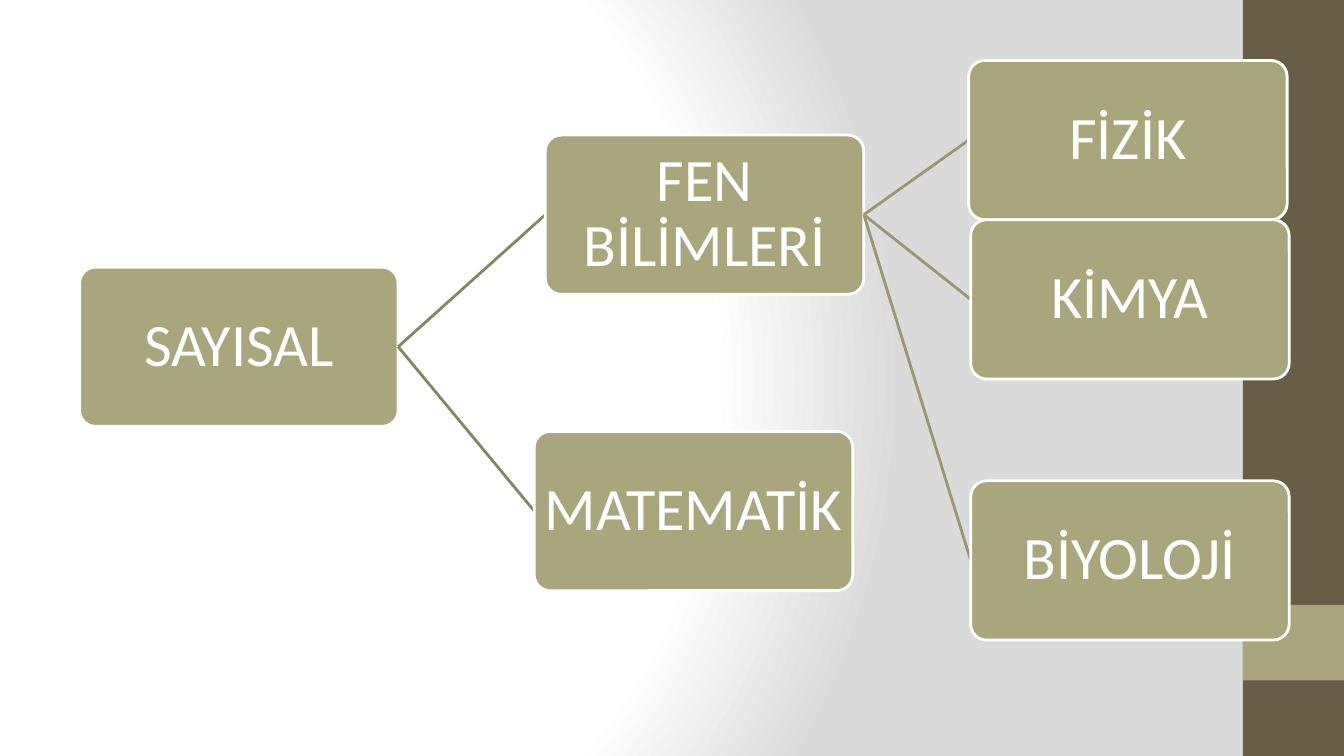
from dataclasses import dataclass

from lxml import etree
from pptx import Presentation
from pptx.dml.color import RGBColor
from pptx.enum.shapes import MSO_CONNECTOR, MSO_SHAPE
from pptx.enum.text import MSO_ANCHOR, PP_ALIGN
from pptx.oxml import parse_xml
from pptx.oxml.ns import nsdecls, qn
from pptx.util import Inches, Pt

STRAIGHT = MSO_CONNECTOR.STRAIGHT
RECTANGLE = MSO_SHAPE.RECTANGLE
ROUNDED = MSO_SHAPE.ROUNDED_RECTANGLE
MIDDLE = MSO_ANCHOR.MIDDLE
CENTER = PP_ALIGN.CENTER
LEFT_SIDE, RIGHT_SIDE = 1, 3

CELL = Inches(0.1)
SLIDE_COLUMNS, SLIDE_ROWS = 133.33, 75
NODE_COLUMNS, NODE_ROWS = 31.6, 15.8
SIDEBAR_BOX = (123.3, 0, 10.03, SLIDE_ROWS)
TREE_BOX = (7.9, 6, 120, 57.5)


@dataclass(frozen=True)
class Theme:
    paper: str = "FFFFFF"
    shade: str = "DADADA"
    sidebar: str = "675E47"
    accent: str = "A9A57C"
    branches: tuple = ("878463", "999671")
    font: str = "Calibri"
    size: int = 43
    stroke: int = 2


THEME = Theme()

SUBJECTS = ("SAYISAL", 0, 20.5, (
    ("FEN BİLİMLERİ", 46.2, 7.4, (
        ("FİZİK", 88.2, 0, ()),
        ("KİMYA", 88.4, 15.8, ()),
        ("BİYOLOJİ", 88.4, 41.7, ()),
    )),
    ("MATEMATİK", 45.1, 36.8, ()),
))


def grid(*cells):
    return [round(count * CELL) for count in cells]


def apply(target, formats):
    for name, value in formats.items():
        setattr(target, name, value)


def color(value):
    return RGBColor.from_string(value)


def add_panel(slide, preset, box, fill):
    panel = slide.shapes.add_shape(preset, *grid(*box))
    panel.shadow.inherit = False
    panel.fill.solid()
    panel.fill.fore_color.rgb = color(fill)
    panel.line.fill.background()
    return panel


def paint_background(slide):
    stops = "".join(
        f'<a:gs pos="{share * 1000}"><a:srgbClr val="{tint}"/></a:gs>'
        for share, tint in ((0, THEME.paper), (75, THEME.paper), (100, THEME.shade))
    )
    background = parse_xml(
        f'<p:bg {nsdecls("p", "a")}><p:bgPr><a:gradFill rotWithShape="1">'
        f'<a:gsLst>{stops}</a:gsLst><a:path path="circle">'
        '<a:fillToRect l="20000" t="50000" r="100000" b="50000"/></a:path>'
        '</a:gradFill><a:effectLst/></p:bgPr></p:bg>'
    )
    slide.element.cSld.insert(0, background)


def add_sidebar(slide, box):
    left, top, width, height = box
    add_panel(slide, RECTANGLE, box, THEME.sidebar)
    band = (left, top + height * 0.8, width, height * 0.1)
    add_panel(slide, RECTANGLE, band, THEME.accent)


def add_node(slide, label, left, top):
    node = add_panel(slide, ROUNDED, (left, top, NODE_COLUMNS, NODE_ROWS), THEME.accent)
    node.adjustments[0] = 0.1
    node.line.color.rgb = color(THEME.paper)
    node.line.width = Pt(THEME.stroke)
    frame = node.text_frame
    inset = Inches(0.03)
    apply(frame, {
        "word_wrap": True, "vertical_anchor": MIDDLE,
        "margin_left": inset, "margin_right": inset,
        "margin_top": inset, "margin_bottom": inset,
    })
    paragraph = frame.paragraphs[0]
    apply(paragraph, {"text": label, "alignment": CENTER, "line_spacing": 0.9})
    font = paragraph.runs[0].font
    apply(font, {"name": THEME.font, "size": Pt(THEME.size)})
    font.color.rgb = color(THEME.paper)
    return node


def add_branch(slide, parent, child, tint):
    branch = slide.shapes.add_connector(STRAIGHT, 0, 0, 0, 0)
    branch.begin_connect(parent, RIGHT_SIDE)
    branch.end_connect(child, LEFT_SIDE)
    branch.line.color.rgb = color(tint)
    branch.line.width = Pt(THEME.stroke)
    etree.SubElement(branch.element.spPr, qn("a:effectLst"))
    child.element.addprevious(branch.element)


def add_tree(slide, box, subject, parent=None, level=0):
    label, column, row, topics = subject
    node = add_node(slide, label, box[0] + column, box[1] + row)
    if parent is not None:
        add_branch(slide, parent, node, THEME.branches[level - 1])
    for topic in topics:
        add_tree(slide, box, topic, node, level + 1)


def main():
    deck = Presentation()
    deck.slide_width, deck.slide_height = grid(SLIDE_COLUMNS, SLIDE_ROWS)
    slide = deck.slides.add_slide(deck.slide_layouts[6])
    paint_background(slide)
    add_sidebar(slide, SIDEBAR_BOX)
    add_tree(slide, TREE_BOX, SUBJECTS)
    deck.save("out.pptx")


if __name__ == "__main__":
    main()
